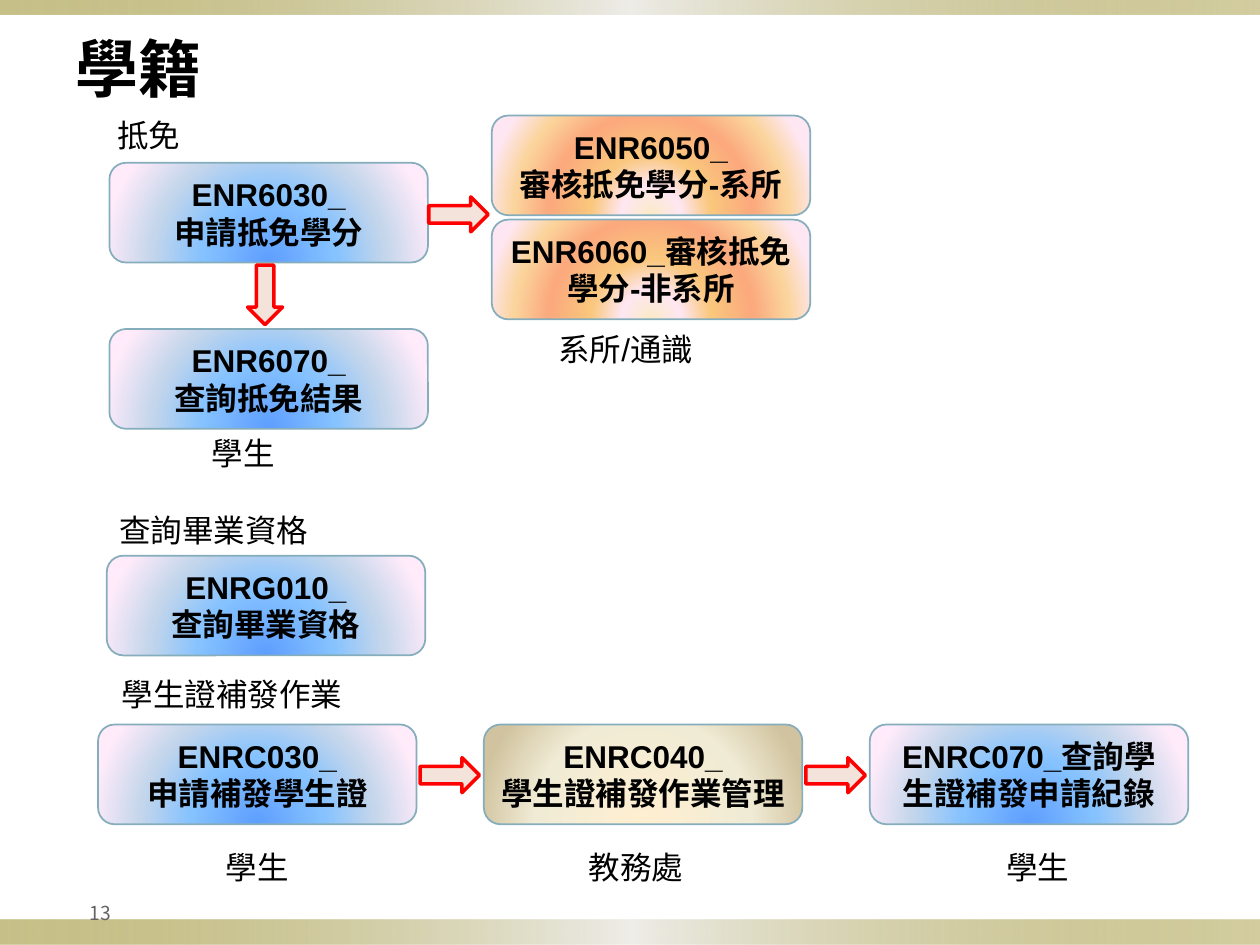
from pptx import Presentation
from pptx.dml.color import RGBColor
from pptx.enum.shapes import MSO_SHAPE
from pptx.enum.text import MSO_ANCHOR, PP_ALIGN
from pptx.oxml import parse_xml
from pptx.oxml.ns import nsdecls
from pptx.util import Pt

RECT, ROUND, ARROW = MSO_SHAPE.RECTANGLE, MSO_SHAPE.ROUNDED_RECTANGLE, MSO_SHAPE.RIGHT_ARROW
LEFT, MID, RIGHT = PP_ALIGN.LEFT, PP_ALIGN.CENTER, PP_ALIGN.RIGHT
TOP, CENTER = MSO_ANCHOR.TOP, MSO_ANCHOR.MIDDLE
LATIN, HAN = "Arial", "Noto Sans CJK SC"
COLORS = {"ink": "000000", "gray": "636363", "edge": "85ADBC", "red": "FF0000", "pale": "F3E3DA"}
GRADS = {
    "bar": [(0, "918415", 50), (50, "EEEDE8", 100), (100, "918415", 40)],
    "blue": [(0, "5E9EFF", 100), (40, "85C2FF", 100), (70, "C4D6EB", 100), (100, "FFEBFA", 100)],
    "peach": [(0, "FBEAC7", 100), (18, "FEE7F2", 100), (36, "FAC77D", 100),
              (61, "FBA97D", 100), (82, "FBD49C", 100), (100, "FEE7F2", 100)],
    "tan": [(0, "FFEFD1", 100), (65, "F0EBD5", 100), (100, "D1C39F", 100)],
}
LINEAR = '<a:lin ang="0" scaled="0"/>'
RADIAL = '<a:path path="circle"><a:fillToRect l="50000" t="100000" r="50000"/></a:path>'
WIDE, HIGH = 182, 57


def rgb(name):
    """Return the named colour."""
    return RGBColor.from_string(COLORS[name])


def blend(shape, name, mode):
    """Fill a shape with a named gradient."""
    stops = "".join(
        f'<a:gs pos="{pos * 1000}"><a:srgbClr val="{color}"><a:alpha val="{alpha * 1000}"/></a:srgbClr></a:gs>'
        for pos, color, alpha in GRADS[name])
    shape.fill.background()
    props = shape.fill._xPr
    grad = parse_xml(f'<a:gradFill {nsdecls("a")} rotWithShape="1"><a:gsLst>{stops}</a:gsLst>{mode}</a:gradFill>')
    props.replace(props.find("{*}noFill"), grad)


def write(shape, text, size=18, font=LATIN, color="ink", bold=False,
          align=LEFT, anchor=TOP, indent=0, wrap=True):
    """Put formatted text into a shape, one paragraph a line."""
    frame = shape.text_frame
    frame.word_wrap, frame.vertical_anchor = wrap, anchor
    frame.text = text
    for para in frame.paragraphs:
        para.alignment = align
        if indent:
            para._p.get_or_add_pPr().set("marL", str(Pt(indent)))
        for run in para.runs:
            run.font.size, run.font.bold, run.font.name = Pt(size), bold, font
            run.font.color.rgb = rgb(color)
            run._r.get_or_add_rPr().find("{*}latin").addnext(
                parse_xml(f'<a:ea {nsdecls("a")} typeface="{HAN}"/>'))


def label(slide, text, x, y, w, h=29, **style):
    """Add a text box."""
    box = slide.shapes.add_textbox(Pt(x), Pt(y), Pt(w), Pt(h))
    write(box, text, **style)
    return box


def form(slide, kind, x, y, w, h):
    """Add a preset shape without shadow."""
    shape = slide.shapes.add_shape(kind, Pt(x), Pt(y), Pt(w), Pt(h))
    shape.shadow.inherit = False
    return shape


def step(slide, text, x, y, grad="blue"):
    """Add a rounded step box."""
    shape = form(slide, ROUND, x, y, WIDE, HIGH)
    blend(shape, grad, RADIAL)
    shape.line.color.rgb, shape.line.width = rgb("edge"), Pt(1)
    write(shape, text, bold=True, align=MID, anchor=CENTER)


def arrow(slide, x, y, turn=0):
    """Add a red block arrow."""
    shape = form(slide, ARROW, x, y, 34, 20)
    shape.rotation = turn
    shape.fill.solid()
    shape.fill.fore_color.rgb = rgb("pale")
    shape.line.color.rgb, shape.line.width = rgb("red"), Pt(2)


def frame(slide, x, y, w, h):
    """Draw the edge bars, title and page number."""
    for top, tall in ((h - 14.5, 14.5), (0, 8.5)):
        bar = form(slide, RECT, x, y + top, w, tall)
        blend(bar, "bar", LINEAR)
        bar.line.fill.background()
    page = label(slide, "13", x, y + 507, 67, size=11, font=HAN, color="gray", align=RIGHT, anchor=CENTER)
    page.text_frame.margin_right = Pt(3.6)
    label(slide, "學籍", x + 36, y + 3.6, w - 72, 70, size=36, font=HAN, bold=True, anchor=CENTER)


def credit(slide, x, y):
    """Draw the credit waiver flow."""
    label(slide, "抵免", x, y, 51, wrap=False)
    step(slide, "ENR6030_\n申請抵免學分", x + 2.5, y + 30.5)
    step(slide, "ENR6070_\n查詢抵免結果", x + 2.5, y + 125.5)
    arrow(slide, x + 185, y + 50)
    arrow(slide, x + 74.5, y + 96, 90)
    step(slide, "ENR6050_\n審核抵免學分-系所", x + 221, y + 3.5, "peach")
    step(slide, "ENR6060_審核抵免學分-非系所", x + 221, y + 63, "peach")
    label(slide, "系所/通識", x + 220, y + 122.5, 188, indent=32)
    label(slide, "學生", x + 26, y + 182, 95, indent=28)


def degree(slide, x, y):
    """Draw the graduation check."""
    label(slide, "查詢畢業資格", x, y, 124, wrap=False)
    step(slide, "ENRG010_\n查詢畢業資格", x, y + 29)


def card(slide, x, y):
    """Draw the student card reissue flow."""
    label(slide, "學生證補發作業", x + 6.5, y, 142, wrap=False)
    parts = [("ENRC030_\n申請補發學生證", "blue", "學生", 38, 95, 28),
             ("ENRC040_\n學生證補發作業管理", "tan", "教務處", 21, 161, 32),
             ("ENRC070_查詢學生證補發申請紀錄", "blue", "學生", 43, 95, 28)]
    for i, (text, grad, role, shift, w, indent) in enumerate(parts):
        left = x + 220.5 * i
        step(slide, text, left, y + 32, grad)
        label(slide, role, left + shift, y + 99, w, indent=indent)
        if i < 2:
            arrow(slide, left + 184, y + 51)


def main():
    """Build and save the slide."""
    deck = Presentation()
    deck.slide_width, deck.slide_height = Pt(720), Pt(540)
    slide = deck.slides.add_slide(deck.slide_layouts[6])
    frame(slide, 0, 0, 720, 540)
    credit(slide, 60, 62.5)
    degree(slide, 61, 288.5)
    card(slide, 56, 382)
    deck.save("out.pptx")


if __name__ == "__main__":
    main()
